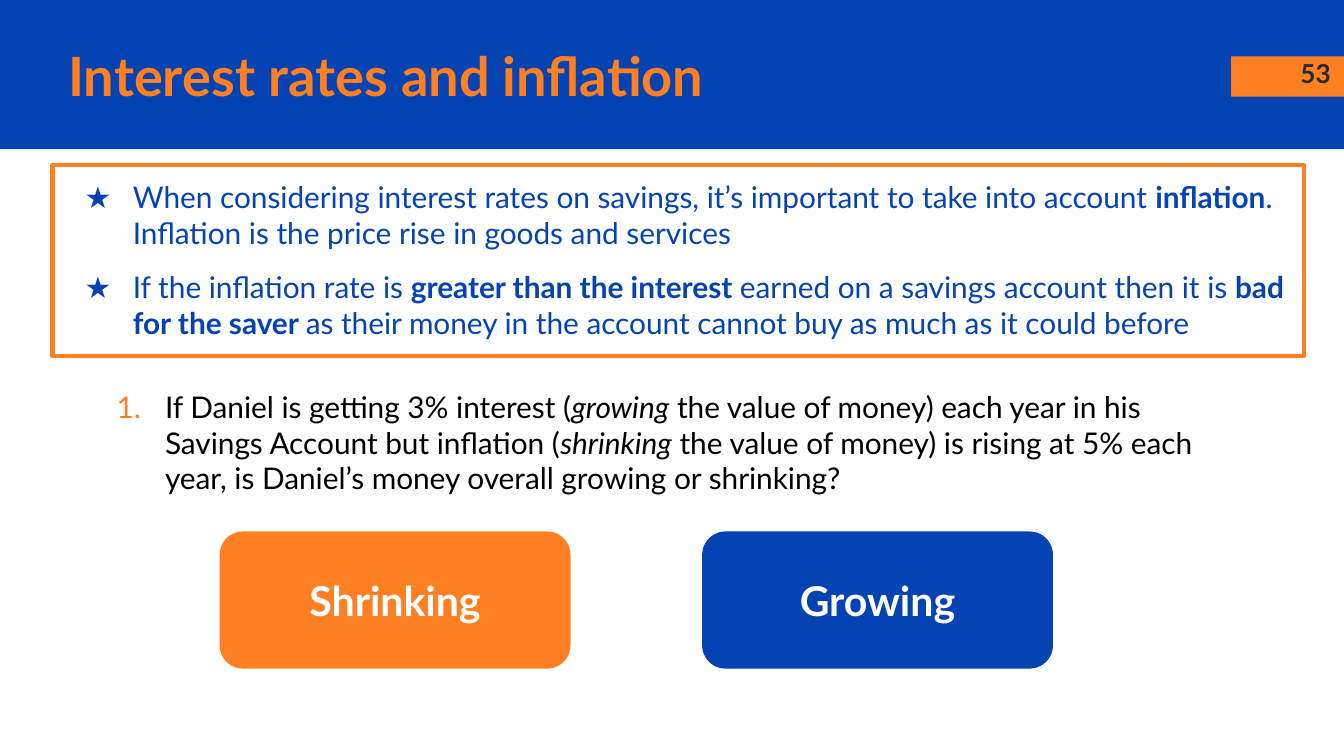
from pptx import Presentation
from pptx.dml.color import RGBColor as Rgb
from pptx.enum.shapes import MSO_SHAPE as Kind
from pptx.enum.text import MSO_ANCHOR as Anchor, PP_ALIGN as Align
from pptx.oxml.ns import qn
from pptx.util import Inches, Pt
from lxml.etree import SubElement as Sub

FONT = "Lato"
HUES = {"blue": "0543B3", "orange": "FF8022", "dark": "262A33",
        "black": "000000", "white": "FFFFFF"}
BOLD = {"bold": True}
ITALIC = {"italic": True}
FACTS = [
    [("When considering interest rates on savings, it’s important to take into account", {}),
     (" inflation", BOLD),
     (". Inflation is the price rise in goods and services", {})],
    [("If the inflation rate is ", {}),
     ("greater than the interest ", BOLD),
     ("earned on a savings account then it is", {}),
     (" bad for the saver ", BOLD),
     ("as their money in the account cannot buy as much as it could before", {})],
]
TASK = [
    ("If Daniel is getting 3% interest (", {}),
    ("growing", ITALIC),
    (" the value of money) each year in his Savings Account but inflation (", {}),
    ("shrinking", ITALIC),
    (" the value of money) is rising at 5% each year, "
     "is Daniel’s money overall growing or shrinking?", {}),
]


def hue(name):
    return Rgb.from_string(HUES[name])


def add_box(slide, kind, at, fill=None, line=None, width=0.75):
    box = slide.shapes.add_shape(kind, *map(Inches, at))
    box.shadow.inherit = False
    if fill:
        box.fill.solid()
        box.fill.fore_color.rgb = hue(fill)
    else:
        box.fill.background()
    if line:
        box.line.color.rgb = hue(line)
        box.line.width = Pt(width)
    else:
        box.line.fill.background()
    return box


def add_label(slide, at):
    return slide.shapes.add_textbox(*map(Inches, at))


def set_frame(shape, anchor=Anchor.TOP):
    frame = shape.text_frame
    form = {"word_wrap": True, "vertical_anchor": anchor}
    for side in ("left", "right", "top", "bottom"):
        form["margin_" + side] = Inches(0.1)
    for key, value in form.items():
        setattr(frame, key, value)
    return frame


def add_runs(para, runs, size, color, align=Align.LEFT):
    para.alignment = align
    for text, style in runs:
        run = para.add_run()
        run.text = text
        form = {"name": FONT, "size": Pt(size), "bold": False,
                "italic": False, **style}
        for key, value in form.items():
            setattr(run.font, key, value)
        run.font.color.rgb = hue(color)


def add_bullet(para, color, tag, **mark):
    props = para._p.get_or_add_pPr()
    props.set("marL", str(Inches(0.5)))
    props.set("indent", str(Inches(-0.36)))
    tint = Sub(props, qn("a:buClr"))
    Sub(tint, qn("a:srgbClr"), val=HUES[color])
    Sub(props, qn("a:buFont"), typeface=FONT)
    Sub(props, qn("a:" + tag), **mark)


def add_header(slide):
    add_box(slide, Kind.RECTANGLE, (0, 0, 10, 1.11), "blue")
    add_box(slide, Kind.RECTANGLE, (9.16, 0.42, 0.84, 0.3), "orange")
    page = set_frame(add_label(slide, (9.4, 0.33, 0.6, 0.43)))
    add_runs(page.paragraphs[0], [("53", BOLD)], 14, "dark", Align.RIGHT)
    title = set_frame(add_label(slide, (0.41, 0.28, 8.46, 0.56)), Anchor.MIDDLE)
    add_runs(title.paragraphs[0], [("Interest rates and inflation", BOLD)],
             29, "orange")


def add_facts(slide):
    box = add_box(slide, Kind.RECTANGLE, (0.39, 1.23, 9.31, 1.42),
                  line="orange", width=2.25)
    frame = set_frame(box)
    for num, runs in enumerate(FACTS):
        para = frame.add_paragraph() if num else frame.paragraphs[0]
        add_bullet(para, "blue", "buChar", char="★")
        if num:
            para.space_before = Pt(10)
        add_runs(para, runs, 16, "blue")


def add_task(slide):
    para = set_frame(add_label(slide, (0.63, 2.79, 8.46, 1.52))).paragraphs[0]
    add_bullet(para, "orange", "buAutoNum", type="arabicPeriod")
    add_runs(para, TASK, 16, "black")


def add_choice(slide, left, text, color):
    box = add_box(slide, Kind.ROUNDED_RECTANGLE, (left, 3.96, 2.6, 1.01),
                  color, color)
    para = set_frame(box, Anchor.MIDDLE).paragraphs[0]
    add_runs(para, [(text, BOLD)], 22, "white", Align.CENTER)


def main():
    deck = Presentation()
    deck.slide_width, deck.slide_height = Inches(10), Inches(10 * 9 / 16)
    slide = deck.slides.add_slide(deck.slide_layouts[6])
    add_header(slide)
    add_task(slide)
    add_choice(slide, 1.64, "Shrinking", "orange")
    add_choice(slide, 5.23, "Growing", "blue")
    add_facts(slide)
    deck.save("out.pptx")


if __name__ == "__main__":
    main()
